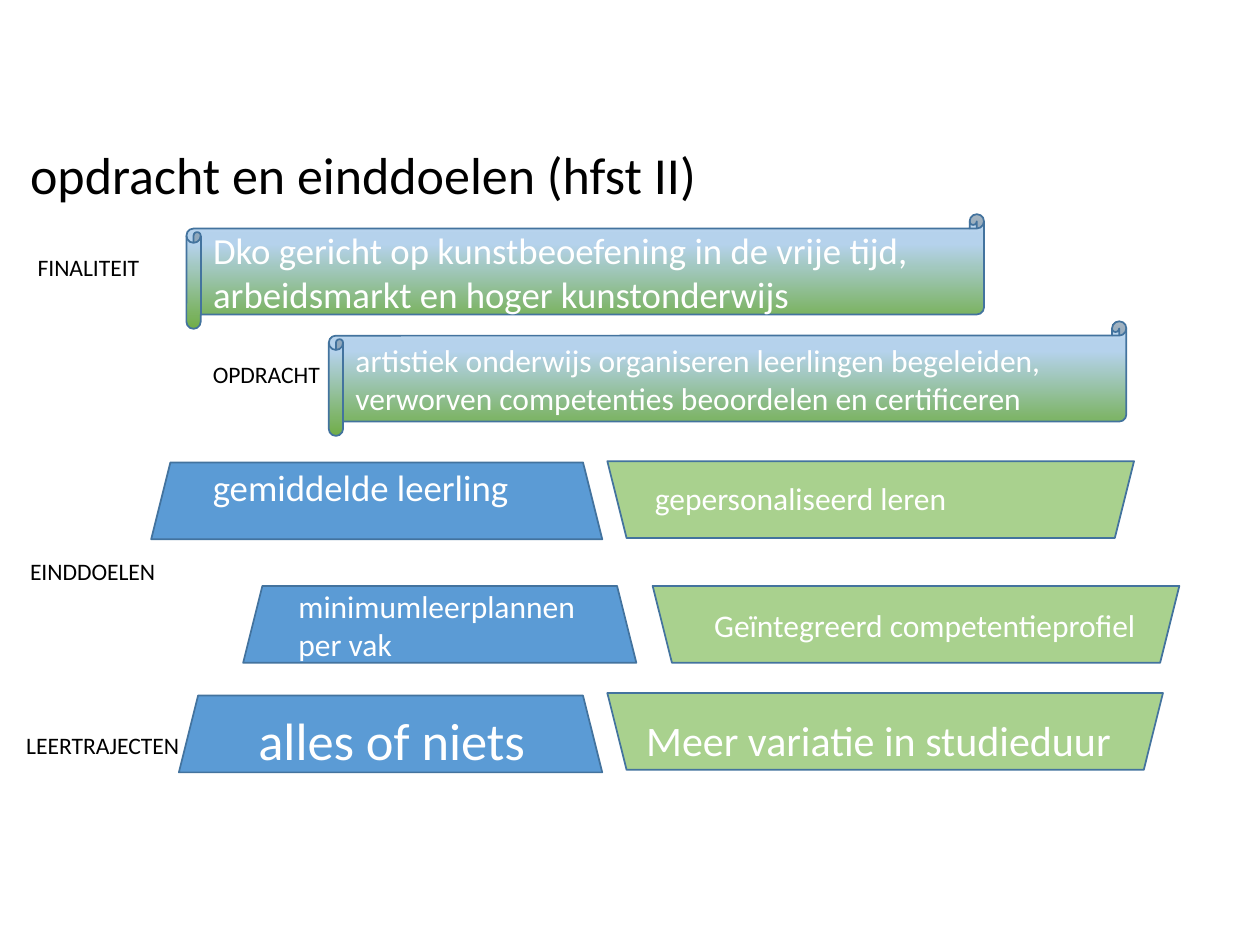
from copy import deepcopy

from pptx import Presentation
from pptx.dml.color import RGBColor
from pptx.enum.shapes import MSO_SHAPE
from pptx.enum.text import MSO_ANCHOR, PP_ALIGN
from pptx.util import Inches, Pt

COLORS = {
    "text": "000000",
    "light": "FFFFFF",
    "blue": "5B9BD5",
    "green": "A9D18E",
    "outline": "43739E",
}
SCROLL_STOPS = [(0, "70AD47"), (0.74, "B5D2EC"), (0.83, "B5D2EC"), (1, "CEE1F2")]

deck = Presentation()
deck.slide_width, deck.slide_height = Inches(10), Inches(7.5)
page = deck.slides.add_slide(deck.slide_layouts[6])

# Grid of 100 columns by 75 rows
COLUMN = deck.slide_width // 100
ROW = deck.slide_height // 75


def add_shape(kind, left, top, width, height):
    shape = page.shapes.add_shape(
        kind, int(left * COLUMN), int(top * ROW), int(width * COLUMN), int(height * ROW))
    shape.shadow.inherit = False
    shape.line.color.rgb = RGBColor.from_string(COLORS["outline"])
    shape.line.width = Pt(1)
    return shape


def write(text, place=None, shape=None, size=18, color="light",
          align=PP_ALIGN.LEFT, anchor=MSO_ANCHOR.TOP):
    if shape is None:
        left, top, width, height = place
        shape = page.shapes.add_textbox(
            int(left * COLUMN), int(top * ROW), int(width * COLUMN), int(height * ROW))
    frame = shape.text_frame
    frame.word_wrap = True
    frame.vertical_anchor = anchor
    para = frame.paragraphs[0]
    para.alignment = align
    span = para.add_run()
    span.text = text
    span.font.name = "Calibri"
    span.font.size = Pt(size)
    span.font.color.rgb = RGBColor.from_string(COLORS[color])


# Title
write("opdracht en einddoelen (hfst II)", place=(1.4, 8.3, 86.2, 10.9),
      size=29.7, color="text", anchor=MSO_ANCHOR.MIDDLE)

# Scrolls with purpose and assignment
scrolls = [
    (14.8, 17, 21, "Dko gericht op kunstbeoefening in de vrije tijd, "
                   "arbeidsmarkt en hoger kunstonderwijs"),
    (26.1, 25.5, 18, "artistiek onderwijs organiseren leerlingen begeleiden, "
                     "verworven competenties beoordelen en certificeren"),
]
for left, top, size, text in scrolls:
    scroll = add_shape(MSO_SHAPE.HORIZONTAL_SCROLL, left, top, 63.3, 9.1)
    scroll.fill.gradient()
    scroll.fill.gradient_angle = 90
    stop_list = scroll.fill._fill._gradFill.gsLst
    for _ in SCROLL_STOPS[2:]:
        stop_list.append(deepcopy(stop_list[0]))
    for stop, (position, color) in zip(scroll.fill.gradient_stops, SCROLL_STOPS):
        stop.position = position
        stop.color.rgb = RGBColor.from_string(color)
    write(text, shape=scroll, size=size, anchor=MSO_ANCHOR.MIDDLE)

# Trapezoids: blue for the old approach, upside-down green for the new
trapezoids = [
    (12, 36.7, 35.8, "blue"), (48.2, 36.6, 41.8, "green"),
    (19.3, 46.5, 31.2, "blue"), (51.8, 46.5, 41.8, "green"),
    (14.2, 55.2, 33.6, "blue"), (48.2, 55, 44.1, "green"),
]
for left, top, width, color in trapezoids:
    trapezoid = add_shape(MSO_SHAPE.TRAPEZOID, left, top, width, 6.1)
    trapezoid.fill.solid()
    trapezoid.fill.fore_color.rgb = RGBColor.from_string(COLORS[color])
    trapezoid.rotation = 180 if color == "green" else 0

# Words on the trapezoids
write("gemiddelde leerling", place=(15.9, 36.4, 28.2, 6.8), size=21)
write("gepersonaliseerd leren", place=(51, 37.5, 38.4, 6.3))
write("minimumleerplannen per vak", place=(22.7, 46.1, 24.6, 9.3))
write("Geïntegreerd competentieprofiel", place=(55.7, 47.6, 38.4, 6.3))
write("alles of niets", place=(17.9, 55.7, 26.4, 8.3), size=30, align=PP_ALIGN.CENTER)
write("Meer variatie in studieduur", place=(50.3, 56.2, 40.5, 7.3), size=24)

# Row labels
labels = [
    ("FINALITEIT", 2, 19.6, 11.1),
    ("OPDRACHT", 15.9, 28.1, 11.1),
    ("EINDDOELEN", 1.4, 43.7, 12.3),
    ("LEERTRAJECTEN", 1.1, 57.5, 14.9),
]
for text, left, top, width in labels:
    write(text, place=(left, top, width, 3.3), size=13.5, color="text")

deck.save("out.pptx")
